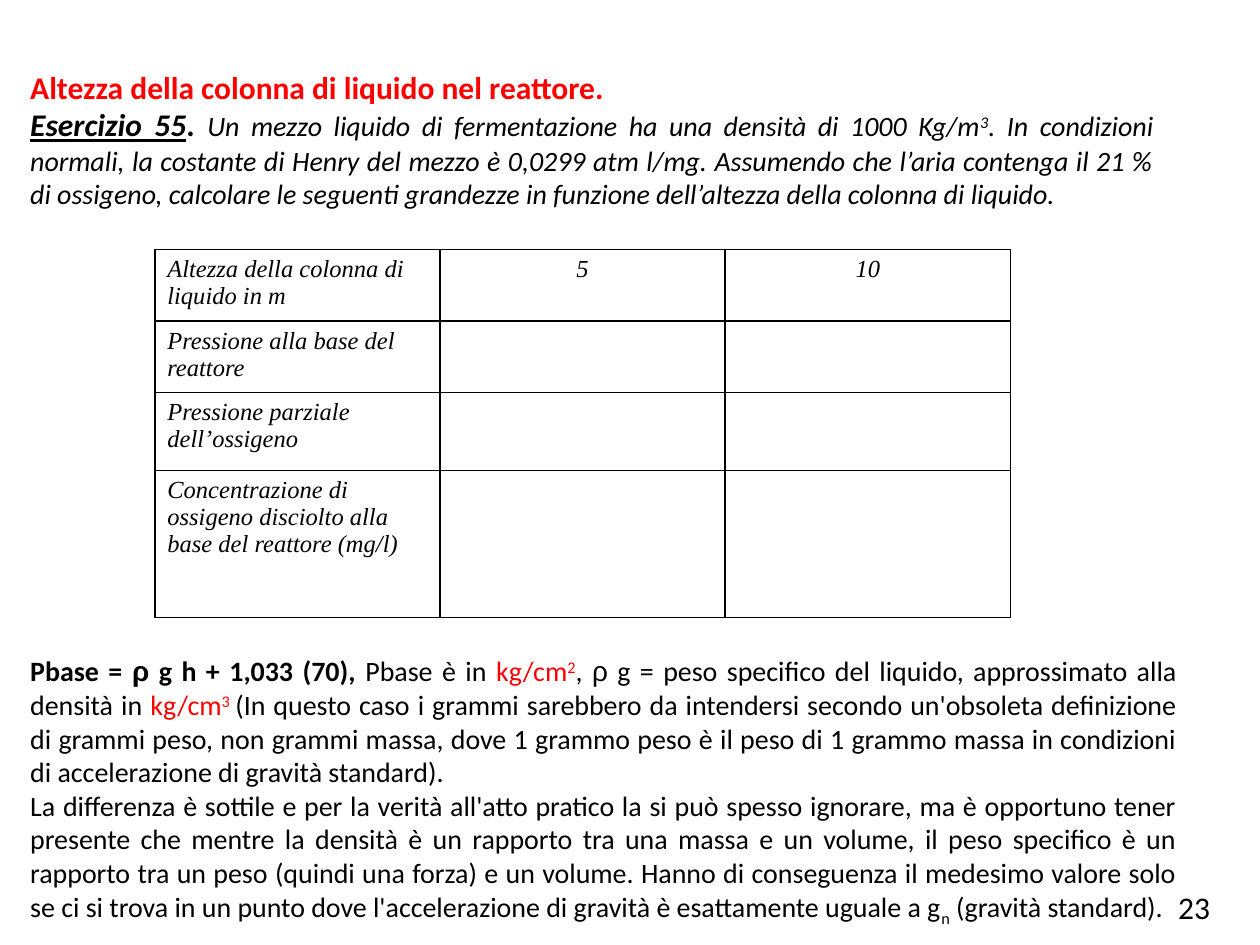
import pptx
import pptx.util
import pptx.dml.color
import pptx.enum.text
import pptx.oxml
import pptx.oxml.ns
from pptx.util import Cm

BLACK, RED = "000000", "FF0000"
ALIGN = pptx.enum.text.PP_ALIGN

INTRO = [
    [("Altezza della colonna di liquido nel reattore. ",
      dict(size=18, color=RED, bold=True))],
    [("Esercizio 55", dict(size=18, bold=True, italic=True, under=True)),
     (". ", dict(size=18, bold=True)),
     ("Un mezzo liquido di fermentazione ha una densità di 1000 Kg/m", dict(italic=True)),
     ("3", dict(italic=True, shift=30)),
     (". In condizioni normali, la costante di Henry del mezzo è 0,0299 atm l/mg. "
      "Assumendo che l’aria contenga il 21 % di ossigeno, calcolare le seguenti "
      "grandezze in funzione dell’altezza della colonna di liquido.", dict(italic=True))],
]

NOTES = [
    [("Pbase = ", dict(bold=True)),
     ("ρ", dict(bold=True, font="Arial")),
     (" g h + 1,033 (70), ", dict(bold=True)),
     ("Pbase è in ", {}),
     ("kg/cm", dict(color=RED)),
     ("2", dict(color=RED, shift=30)),
     (", ", {}),
     ("ρ", dict(font="Arial")),
     (" g = peso specifico del liquido, approssimato alla densità in ", {}),
     ("kg/cm", dict(color=RED)),
     ("3 ", dict(color=RED, shift=30)),
     ("(In questo caso i grammi sarebbero da intendersi secondo un'obsoleta definizione "
      "di grammi peso, non grammi massa, dove 1 grammo peso è il peso di 1 grammo massa "
      "in condizioni di accelerazione di gravità standard). ", {})],
    [("La differenza è sottile e per la verità all'atto pratico la si può spesso ignorare, "
      "ma è opportuno tener presente che mentre la densità è un rapporto tra una massa e un "
      "volume, il peso specifico è un rapporto tra un peso (quindi una forza) e un volume. "
      "Hanno di conseguenza il medesimo valore solo se ci si trova in un punto dove "
      "l'accelerazione di gravità è esattamente uguale a g", {}),
     ("n", dict(shift=-25)),
     (" (gravità standard).", {})],
]

ROWS = [
    ("Altezza della colonna di liquido in m", "5", "10"),
    ("Pressione alla base del reattore", "", ""),
    ("Pressione parziale dell’ossigeno", "", ""),
    ("Concentrazione di ossigeno disciolto alla base del reattore (mg/l)", "", ""),
]
HEIGHTS = (1.43, 1.43, 1.57, 2.97)


def paint(color, text):
    color.rgb = pptx.dml.color.RGBColor.from_string(text)


def style(run, size=16, font="Calibri", color=BLACK, bold=False,
          italic=False, under=False, shift=0):
    """Format a run; shift raises or lowers it by a percentage."""
    face = run.font
    face.size = pptx.util.Pt(size)
    face.name = font
    face.bold, face.italic, face.underline = bold, italic, under
    paint(face.color, color)
    if shift:
        run._r.get_or_add_rPr().set("baseline", str(shift * 1000))


def add_text(slide, left, top, width, height, paras, align=ALIGN.JUSTIFY, wrap=True):
    box = slide.shapes.add_textbox(Cm(left), Cm(top), Cm(width), Cm(height))
    frame = box.text_frame
    frame.word_wrap = wrap
    for index, parts in enumerate(paras):
        para = frame.add_paragraph() if index else frame.paragraphs[0]
        para.alignment = align
        for text, look in parts:
            run = para.add_run()
            run.text = text
            style(run, **look)


def frame_cell(cell):
    """Clear the fill and draw a thin black line on all four sides."""
    cell.fill.background()
    props = cell._tc.get_or_add_tcPr()
    for index, side in enumerate("LRTB"):
        line = pptx.oxml.parse_xml(
            f'<a:ln{side} {pptx.oxml.ns.nsdecls("a")} w="12700">'
            f'<a:solidFill><a:srgbClr val="{BLACK}"/></a:solidFill></a:ln{side}>')
        props.insert(index, line)


def add_grid(slide, left, top, width):
    count = len(ROWS[0])
    table = slide.shapes.add_table(
        len(ROWS), count, Cm(left), Cm(top), Cm(width), Cm(sum(HEIGHTS))).table
    table.first_row = table.horz_banding = False
    for col in table.columns:
        col.width = Cm(width / count)
    for row, high, texts in zip(table.rows, HEIGHTS, ROWS):
        row.height = Cm(high)
        for index, (cell, text) in enumerate(zip(row.cells, texts)):
            frame_cell(cell)
            if text:
                cell.text_frame.text = text
                para = cell.text_frame.paragraphs[0]
                para.alignment = ALIGN.CENTER if index else ALIGN.LEFT
                style(para.runs[0], size=14, font="Times New Roman", italic=True)


def main():
    deck = pptx.Presentation()
    deck.slide_width, deck.slide_height = Cm(25.4), Cm(19.05)
    slide = deck.slides.add_slide(deck.slide_layouts[6])
    add_text(slide, 23.5, 17.78, 1.35, 1.27, [[("23", dict(size=18))]], ALIGN.LEFT, False)
    add_text(slide, 0.36, 1.24, 23.14, 15.47, INTRO)
    add_grid(slide, 3.12, 5.03, 17.25)
    add_text(slide, 0.36, 13.06, 23.62, 5.74, NOTES)
    deck.save("out.pptx")


if __name__ == "__main__":
    main()
